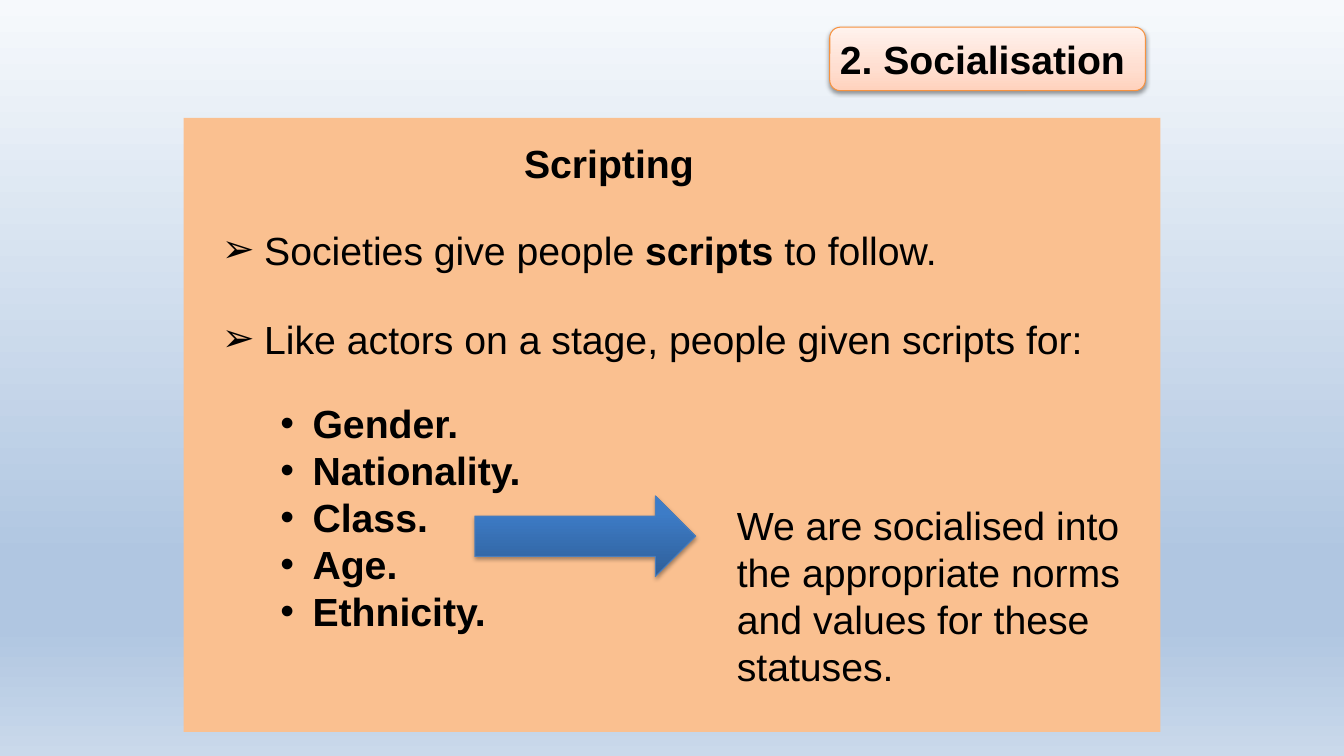
import pptx
import pptx.util
import pptx.dml.color
import pptx.enum.shapes
import pptx.enum.text
import pptx.oxml
import pptx.oxml.ns

Inches = pptx.util.Inches
Pt = pptx.util.Pt
Kind = pptx.enum.shapes.MSO_SHAPE
Anchor = pptx.enum.text.MSO_ANCHOR
qn = pptx.oxml.ns.qn
SPACE = pptx.oxml.ns.nsdecls("a")

COLORS = {
    "text": "000000",
    "panel": "FAC090",
    "tag line": "F69240",
    "arrow line": "4B7EBC",
}
SKY = [(0, "F6F9FC"), (74, "B0C6E1"), (83, "B0C6E1"), (100, "CAD9EB")]
PEACH = [(0, "FFD2BD"), (35, "FFDED0"), (100, "FFF2ED")]
BLUE = [(0, "2F5F99"), (80, "3D7CC7"), (100, "3A7CCB")]


class Page:
    font = "Arial"
    size = 28

    def __init__(self, deck):
        self.slide = deck.slides.add_slide(deck.slide_layouts[3])
        self.shapes = self.slide.shapes

    def color(self, name):
        return pptx.dml.color.RGBColor.from_string(COLORS[name])

    def blend(self, fill, root, stops, angle):
        """Fill with a linear gradient of (percent, colour) stops."""
        fill.gradient()
        fill.gradient_angle = angle
        series = root.find(".//" + qn("a:gsLst"))
        for stop in list(series):
            series.remove(stop)
        for place, tone in stops:
            series.append(pptx.oxml.parse_xml(
                f'<a:gs {SPACE} pos="{place * 1000}">'
                f'<a:srgbClr val="{tone}"/></a:gs>'))

    def backdrop(self, stops):
        self.blend(self.slide.background.fill, self.slide._element, stops, 270)

    def panel(self, box, fill):
        shape = self.shapes.add_shape(Kind.RECTANGLE, *map(Inches, box))
        shape.shadow.inherit = False
        shape.fill.solid()
        shape.fill.fore_color.rgb = self.color(fill)
        shape.line.fill.background()

    def raised(self, kind, box, stops, line, depth, alpha):
        """Draw a gradient shape that casts a soft shadow downwards."""
        shape = self.shapes.add_shape(kind, *map(Inches, box))
        self.blend(shape.fill, shape._element, stops, 90)
        shape.line.color.rgb = self.color(line)
        shape.line.width = Pt(0.75)
        shape.shadow.inherit = False
        shape._element.spPr.find(qn("a:effectLst")).append(pptx.oxml.parse_xml(
            f'<a:outerShdw {SPACE} blurRad="{Pt(3.1)}" dist="{Pt(depth)}" '
            f'dir="5400000" rotWithShape="0"><a:srgbClr val="000000">'
            f'<a:alpha val="{alpha * 1000}"/></a:srgbClr></a:outerShdw>'))

    def words(self, para, text, bold=False):
        """Set a line of text; parts between asterisks switch the weight."""
        for part in text.split("*"):
            run = para.add_run()
            run.text = part
            run.font.name = self.font
            run.font.size = Pt(self.size)
            run.font.bold = bold
            run.font.color.rgb = self.color("text")
            bold = not bold

    def frame(self, shape, box, anchor=Anchor.TOP):
        shape.left, shape.top, shape.width, shape.height = map(Inches, box)
        frame = shape.text_frame
        frame.word_wrap = True
        frame.auto_size = pptx.enum.text.MSO_AUTO_SIZE.NONE
        frame.vertical_anchor = anchor
        return frame

    def holder(self, index, box, anchor=Anchor.TOP):
        """Move a placeholder into place, above the shapes drawn so far."""
        shape = next(item for item in self.slide.placeholders
                     if item.placeholder_format.idx == index)
        self.shapes._spTree.append(shape._element)
        return self.frame(shape, box, anchor)

    def title(self, text, box):
        para = self.holder(0, box, Anchor.MIDDLE).paragraphs[0]
        para.alignment = pptx.enum.text.PP_ALIGN.LEFT
        self.words(para, text, bold=True)

    def label(self, text, box, bold=False):
        shape = self.shapes.add_textbox(*map(Inches, box))
        self.words(self.frame(shape, box).paragraphs[0], text, bold)

    def bullets(self, index, items, box, mark, indent, gap=0, bold=False):
        frame = self.holder(index, box)
        for row, text in enumerate(items):
            para = frame.add_paragraph() if row else frame.paragraphs[0]
            para.space_before = Pt(gap if row else 0)
            props = para._p.get_or_add_pPr()
            props.set("marL", str(Inches(indent)))
            props.set("indent", str(-Inches(indent)))
            for tag in (f'<a:buFont {SPACE} typeface="Arial"/>',
                        f'<a:buChar {SPACE} char="{mark}"/>'):
                props.append(pptx.oxml.parse_xml(tag))
            self.words(para, text, bold)


def main():
    deck = pptx.Presentation()
    deck.slide_width, deck.slide_height = Inches(13.33), Inches(7.5)
    page = Page(deck)

    # Background and panel
    page.backdrop(SKY)
    page.panel((1.82, 1.17, 9.69, 6.09), "panel")

    # Topic tag
    tag = (8.23, 0.27, 3.13, 0.63)
    page.raised(Kind.ROUNDED_RECTANGLE, tag, PEACH, "tag line", 1.6, 38)
    page.title("2. Socialisation", tag)

    # Heading and main points
    page.label("Scripting", (5.1, 1.33, 1.9, 0.57), bold=True)
    page.bullets(1, ["Societies give people *scripts* to follow.",
                     "Like actors on a stage, people given scripts for:"],
                 (2.1, 2.19, 8.95, 1.43), "➢", 0.42, gap=30)

    # Statuses and their outcome
    page.bullets(2, ["Gender.", "Nationality.", "Class.", "Age.", "Ethnicity."],
                 (2.68, 3.91, 3.36, 2.46), "•", 0.32, bold=True)
    page.label("We are socialised into the appropriate norms and values "
               "for these statuses.", (7.21, 4.92, 4.14, 1.99))
    page.raised(Kind.RIGHT_ARROW, (4.71, 4.92, 2.19, 0.8), BLUE,
                "arrow line", 1.8, 35)

    deck.save("out.pptx")


if __name__ == "__main__":
    main()
